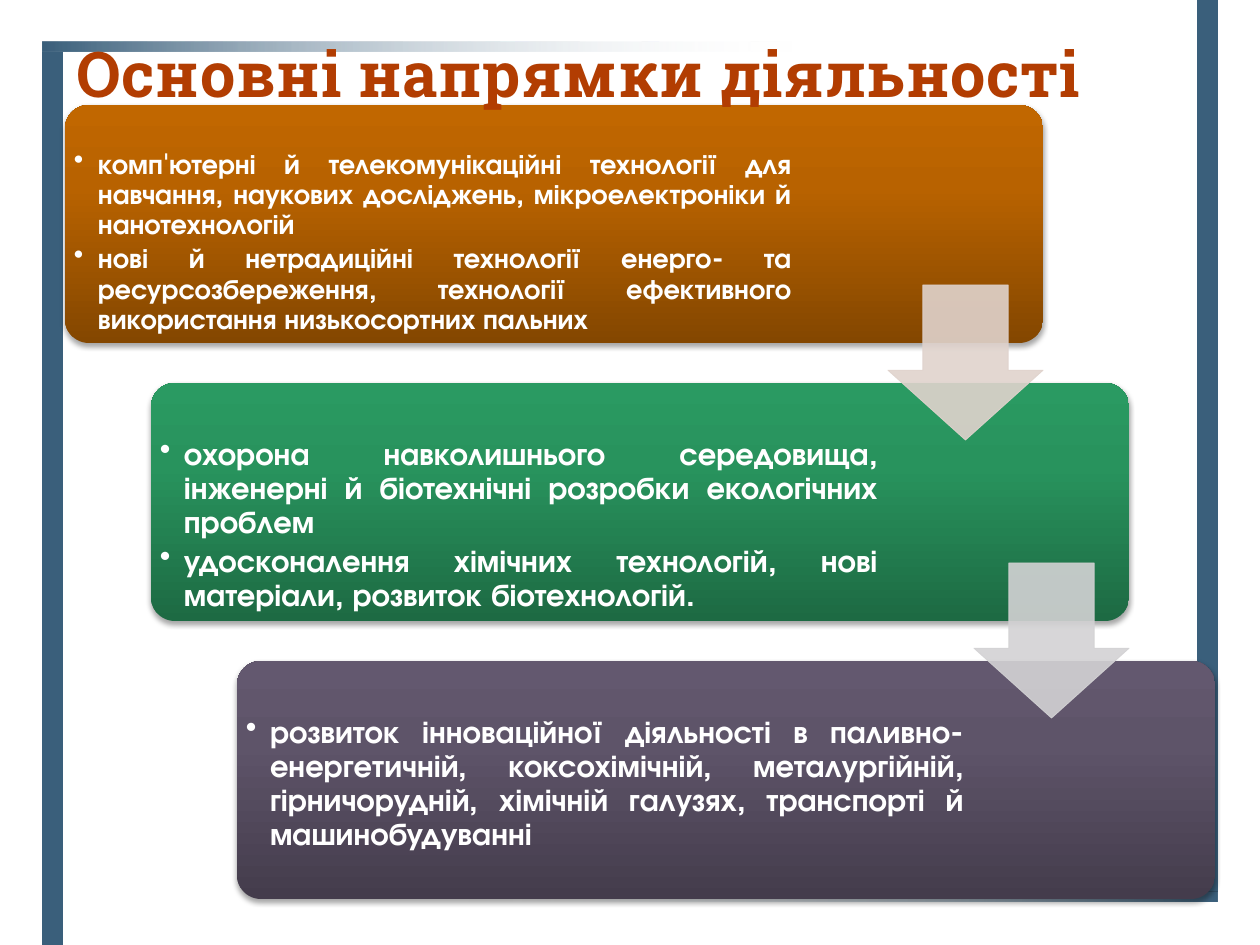
from lxml import etree
from pptx import Presentation
from pptx.dml.color import RGBColor
from pptx.enum.shapes import MSO_SHAPE
from pptx.enum.text import MSO_ANCHOR, PP_ALIGN
from pptx.oxml import parse_xml
from pptx.oxml.ns import nsdecls, qn
from pptx.util import Emu, Pt

PX = 914400 / 126
COLORS = {
    "frame": "3A5F7B", "white": "FFFFFF", "title": "B23D02",
    "orange": ("844700", "B86200", "C16700"),
    "green": ("1D6A43", "28935D", "2A9A62"),
    "violet": ("443C4C", "5E5469", "63586F"),
    "arrow_warm": "E0D3CD", "arrow_cool": "D3D2D4",
}
STEPS = [
    ("orange", 16, 45, [
        "комп'ютерні й телекомунікаційні технології для навчання, наукових досліджень, "
        "мікроелектроніки й нанотехнологій",
        "нові й нетрадиційні технології енерго- та ресурсозбереження, технології "
        "ефективного використання низькосортних пальних"]),
    ("green", 18, 55, [
        "охорона навколишнього середовища, інженерні й біотехнічні розробки "
        "екологічних проблем",
        "удосконалення хімічних технологій, нові матеріали, розвиток біотехнологій."]),
    ("violet", 18, 55, [
        "розвиток інноваційної діяльності в паливно-енергетичній, коксохімічній, "
        "металургійній, гірничорудній, хімічній галузях, транспорті й машинобудуванні"]),
]


def px(n):
    return Emu(round(n * PX))


def rgb(name):
    return RGBColor.from_string(COLORS[name])


def add_shape(s, kind, box):
    sp = s.shapes.add_shape(kind, *map(px, box))
    sp.shadow.inherit = False
    sp.line.fill.background()
    return sp


def set_gradient(sp, stops, angle):
    """Stops are (position %, colour, opacity %); the angle is clockwise degrees."""
    sp.fill.gradient()
    grad = sp.fill._xPr.find(qn("a:gradFill"))
    stop_xml = "".join(
        f'<a:gs pos="{pos * 1000}"><a:srgbClr val="{color}">'
        f'<a:alpha val="{alpha * 1000}"/></a:srgbClr></a:gs>'
        for pos, color, alpha in stops)
    grad.getparent().replace(grad, parse_xml(
        f'<a:gradFill {nsdecls("a")} rotWithShape="1"><a:gsLst>{stop_xml}</a:gsLst>'
        f'<a:lin ang="{angle * 60000}" scaled="0"/></a:gradFill>'))


def add_frame(s, box):
    x, y, w, h = box
    side, edge = 21, 10
    # Solid side bars
    for bar in ((x + w - side, 0, side, y + h - edge),
                (x, y + edge, side, 945 - y - edge)):
        sp = add_shape(s, MSO_SHAPE.RECTANGLE, bar)
        sp.fill.solid()
        sp.fill.fore_color.rgb = rgb("frame")
    # Fading top and bottom bars
    stops = [(0, COLORS["frame"], 100), (65, COLORS["white"], 0), (100, COLORS["white"], 0)]
    for left, top, angle in ((x, y, 0), (x + side, y + h - edge, 180)):
        sp = add_shape(s, MSO_SHAPE.RECTANGLE, (left, top, w - side, edge))
        set_gradient(sp, stops, angle)


def add_step(s, box, color, size, text_top, items):
    x, y, w, h = box
    # Card
    card = add_shape(s, MSO_SHAPE.ROUNDED_RECTANGLE, box)
    card.adjustments[0] = 0.1
    set_gradient(card, [(pos, c, 100) for pos, c in zip((0, 65, 100), COLORS[color])], 270)
    card._element.spPr.find(qn("a:effectLst")).append(parse_xml(
        f'<a:outerShdw {nsdecls("a")} blurRad="{Pt(3.1)}" dist="{Pt(2)}" dir="5400000" '
        'rotWithShape="0"><a:srgbClr val="000000"><a:alpha val="35000"/></a:srgbClr>'
        '</a:outerShdw>'))
    # Bulleted list
    tf = s.shapes.add_textbox(px(x), px(y), px(736), px(h)).text_frame
    tf.word_wrap = True
    tf.vertical_anchor = MSO_ANCHOR.TOP
    tf.margin_left = tf.margin_right = tf.margin_bottom = px(9)
    tf.margin_top = px(text_top)
    for i, item in enumerate(items):
        p = tf.paragraphs[0] if i == 0 else tf.add_paragraph()
        p.text = item
        p.level = 1
        p.alignment = PP_ALIGN.JUSTIFY
        p.line_spacing = 0.9
        p.space_after = Pt(size * 0.15)
        pPr = p._p.get_or_add_pPr()
        pPr.set("marL", str(px(24)))
        pPr.set("indent", str(-px(24)))
        etree.SubElement(pPr, qn("a:buChar")).set("char", "•")
        font = p.runs[0].font
        font.name, font.size, font.bold = "TeX Gyre Adventor", Pt(size), True
        font.color.rgb = rgb("white")


def add_arrow(s, box, color):
    sp = add_shape(s, MSO_SHAPE.DOWN_ARROW, box)
    sp.adjustments[0], sp.adjustments[1] = 0.55, 0.45
    sp.fill.solid()
    sp.fill.fore_color.rgb = rgb(color)
    sp.line.color.rgb = rgb(color)
    sp.line.width = Pt(0.5)
    for clr in sp._element.spPr.iter(qn("a:srgbClr")):
        etree.SubElement(clr, qn("a:alpha")).set("val", "90000")


def add_staircase(s, box):
    x, y, w, h = box
    dx, dy = 86, 278
    for i, step in enumerate(STEPS):
        add_step(s, (x + i * dx, y + i * dy, w, h), *step)
    for i, color in enumerate(("arrow_warm", "arrow_cool")):
        add_arrow(s, (x + i * dx + w - 155, y + i * dy + 180, 155, 155), color)


def add_title(s, box):
    title = s.shapes.title
    title.left, title.top, title.width, title.height = map(px, box)
    tf = title.text_frame
    tf.text = "Основні напрямки діяльності"
    tf.word_wrap = True
    tf.vertical_anchor = MSO_ANCHOR.BOTTOM
    p = tf.paragraphs[0]
    p.alignment = PP_ALIGN.LEFT
    r = p.runs[0]
    r.font.name, r.font.size, r.font.bold = "Roboto Slab", Pt(36), True
    r.font.color.rgb = rgb("title")
    r._r.get_or_add_rPr().set("spc", "50")
    # Bring the title in front of the cards
    title._element.getparent().append(title._element)


def main():
    prs = Presentation()
    prs.slide_width, prs.slide_height = px(1260), px(945)
    s = prs.slides.add_slide(prs.slide_layouts[5])
    add_frame(s, (42, 42, 1176, 860))
    add_staircase(s, (65, 105, 978, 238))
    add_title(s, (64, 0, 1113, 116))
    prs.save("out.pptx")


if __name__ == "__main__":
    main()
